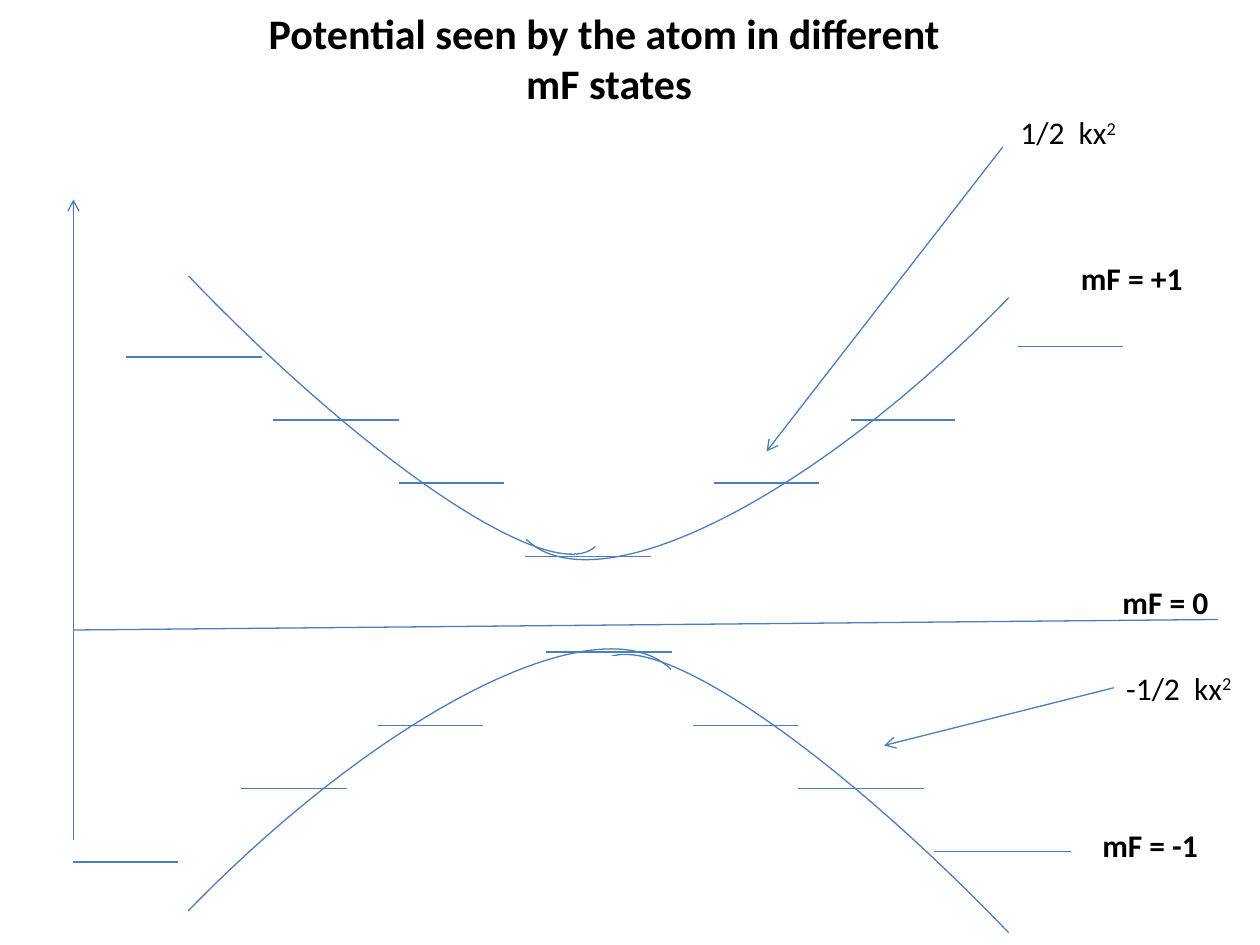
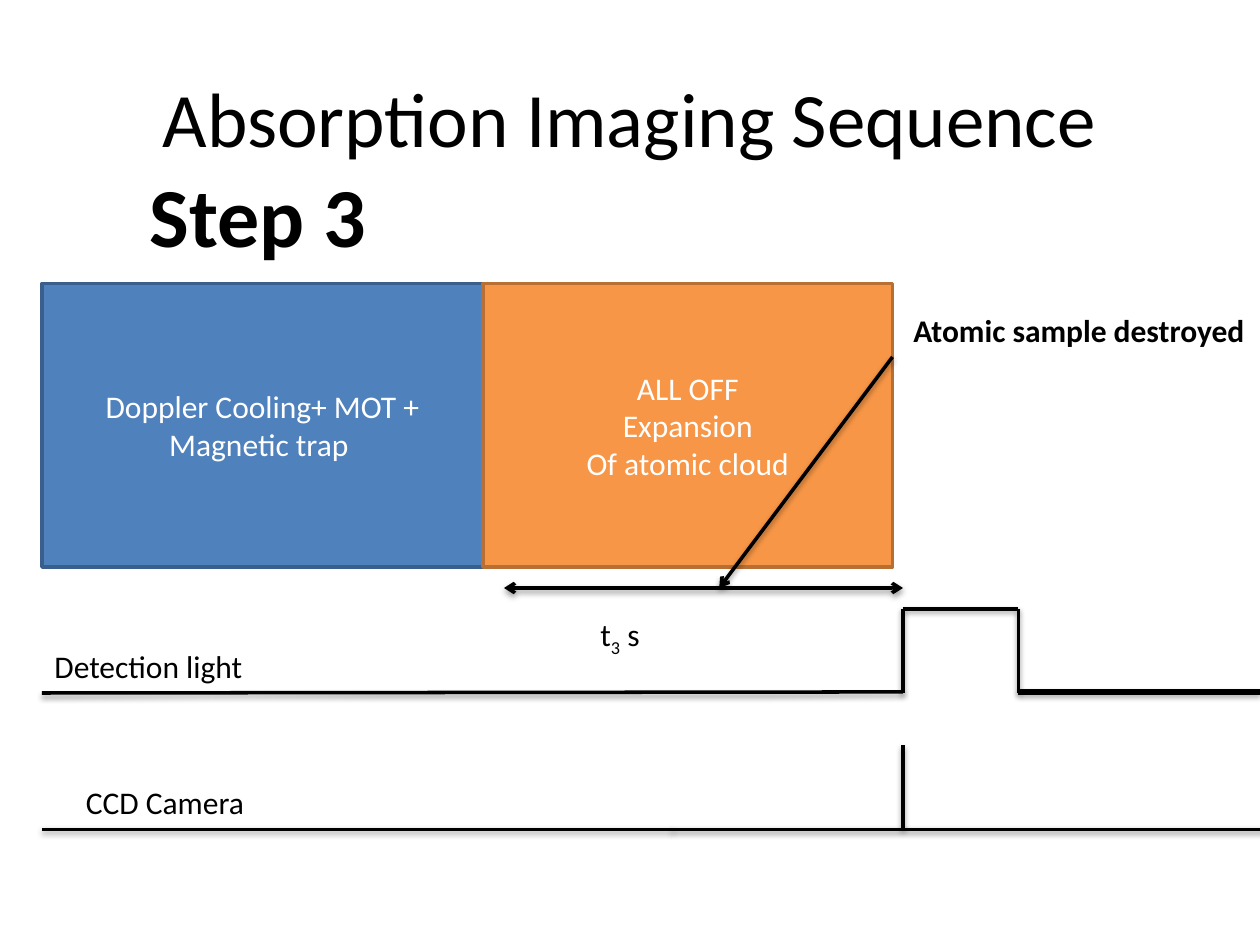
from dataclasses import dataclass
from typing import Optional

import pptx
import pptx.dml.color
import pptx.enum.shapes
import pptx.enum.text
import pptx.oxml
import pptx.oxml.ns
import pptx.util
from lxml import etree

COLS, ROWS = 120, 90  # the grid laid over each slide
WIDE, HIGH = pptx.util.Inches(10), pptx.util.Inches(7.5)
FONT = "Calibri"
HUES = {
    "black": "000000",
    "white": "FFFFFF",
    "curve": "4B7EBC",
    "blue": "4F81BD",
    "navy": "3A5F8C",
    "orange": "F79646",
    "rust": "B76F34",
}
SHAPES = pptx.enum.shapes.MSO_SHAPE
ALIGN = pptx.enum.text.PP_ALIGN


@dataclass(frozen=True)
class Line:
    x1: float
    y1: float
    x2: float
    y2: float
    hue: str = "curve"
    width: float = 0.75
    head: bool = False
    tail: bool = False
    glow: int = 0  # shadow strength in percent


@dataclass(frozen=True)
class Label:
    """Text box; script is a raised or lowered mark, followed by rest."""
    col: float
    row: float
    wide: float
    text: str
    bold: bool = False
    script: str = ""
    shift: int = 0
    rest: str = ""
    size: float = 18
    high: float = 4.8


@dataclass(frozen=True)
class Box:
    col: float
    row: float
    wide: float
    high: float
    fill: str
    edge: Optional[str] = None
    text: str = ""


@dataclass(frozen=True)
class Arc:
    """Quarter ellipse placed by its centre."""
    x: float
    y: float
    wide: float
    high: float
    turn: float
    flip: bool = False


@dataclass(frozen=True)
class Level:
    start: float
    end: float
    row: float


def across(cols: float) -> int:
    return round(WIDE * cols / COLS)


def down(rows: float) -> int:
    return round(HIGH * rows / ROWS)


def place(x: float, y: float, wide: float, high: float) -> tuple[int, int, int, int]:
    return across(x), down(y), across(wide), down(high)


def shade(name: str) -> pptx.dml.color.RGBColor:
    return pptx.dml.color.RGBColor.from_string(HUES[name])


def style(frame, size: float, hue: str, bold: bool = False, align=None) -> None:
    for para in frame.paragraphs:
        para.alignment = align
        for run in para.runs:
            font = run.font
            font.name, font.size, font.bold = FONT, pptx.util.Pt(size), bold
            font.color.rgb = shade(hue)


def draw_line(slide, line: Line) -> None:
    link = slide.shapes.add_connector(
        pptx.enum.shapes.MSO_CONNECTOR.STRAIGHT,
        across(line.x1), down(line.y1), across(line.x2), down(line.y2))
    link.line.color.rgb = shade(line.hue)
    link.line.width = pptx.util.Pt(line.width)
    qn = pptx.oxml.ns.qn
    props = link._element.spPr
    stroke = props.find(qn("a:ln"))
    for tag, shown in (("a:headEnd", line.head), ("a:tailEnd", line.tail)):
        if shown:
            etree.SubElement(stroke, qn(tag), type="arrow")
    effects = etree.SubElement(props, qn("a:effectLst"))
    if line.glow:
        cast = etree.SubElement(
            effects, qn("a:outerShdw"), blurRad="40000", dist="20000",
            dir="5400000", rotWithShape="0")
        tint = etree.SubElement(cast, qn("a:srgbClr"), val=HUES["black"])
        etree.SubElement(tint, qn("a:alpha"), val=str(line.glow * 1000))


def draw_label(slide, label: Label) -> None:
    box = slide.shapes.add_textbox(
        *place(label.col, label.row, label.wide, label.high))
    frame = box.text_frame
    frame.word_wrap = False
    frame.auto_size = pptx.enum.text.MSO_AUTO_SIZE.SHAPE_TO_FIT_TEXT
    frame.text = label.text
    para = frame.paragraphs[0]
    if label.script:
        mark = para.add_run()
        mark.text = label.script
        mark._r.get_or_add_rPr().set("baseline", str(label.shift * 1000))
    if label.rest:
        para.add_run().text = label.rest
    style(frame, label.size, "black", label.bold)


def draw_title(slide, col: float, row: float, text: str, size: float,
               bold: bool = False) -> None:
    frame = slide.shapes.add_textbox(*place(col, row, 108, 15)).text_frame
    frame.word_wrap = True
    frame.vertical_anchor = pptx.enum.text.MSO_ANCHOR.MIDDLE
    frame.text = text
    style(frame, size, "black", bold, ALIGN.CENTER)


def draw_box(slide, box: Box) -> None:
    shape = slide.shapes.add_shape(
        SHAPES.RECTANGLE, *place(box.col, box.row, box.wide, box.high))
    shape.shadow.inherit = False
    shape.fill.solid()
    shape.fill.fore_color.rgb = shade(box.fill)
    if box.edge:
        shape.line.color.rgb = shade(box.edge)
        shape.line.width = pptx.util.Pt(2)
    else:
        shape.line.fill.background()
    if box.text:
        shape.text_frame.text = box.text
        style(shape.text_frame, 18, "white", align=ALIGN.CENTER)


def draw_arc(slide, arc: Arc) -> None:
    shape = slide.shapes.add_shape(SHAPES.ARC, *place(
        arc.x - arc.wide / 2, arc.y - arc.high / 2, arc.wide, arc.high))
    shape.shadow.inherit = False
    shape.fill.background()
    shape.line.color.rgb = shade("curve")
    shape.line.width = pptx.util.Pt(0.75)
    shape.rotation = arc.turn
    if arc.flip:
        shape._element.spPr.xfrm.set("flipH", "1")


# The lower well is the upper one after a half turn about a point.
SPAN, DROP = 114, 115.1
LEVELS = [
    Level(12, 25, 34), Level(26, 38, 40), Level(38, 48, 46),
    Level(50, 62, 53), Level(68, 78, 46), Level(81, 91, 40),
    Level(97, 107, 33),
]
ARCS = [
    Arc(83.94, 16.56, 97.08, 33.84, 134.2),
    Arc(25.26, 19.26, 90.84, 20.28, 226.2, flip=True),
]
STATES = [
    Label(101.76, 24.12, 12.24, "mF = +1", bold=True),
    Label(103.8, 78.12, 11.64, "mF = -1", bold=True),
    Label(105.72, 54.96, 10.68, "mF = 0", bold=True),
    Label(96, 10.2, 11.76, "1/2  kx", script="2", shift=30),
    Label(106.08, 63.12, 12.72, "-1/2  kx", script="2", shift=30),
]
GUIDES = [
    Line(7, 80, 7, 19, tail=True),
    Line(7, 60, 116, 59),
    Line(95.5, 14, 73, 43, tail=True),
    Line(106.08, 65.5, 84.2, 71, tail=True),
]


def draw_wells(slide) -> None:
    draw_title(slide, 4, -2, "Potential seen by the atom in different \vmF states",
               24, bold=True)
    for line in GUIDES:
        draw_line(slide, line)
    for lev in LEVELS:
        draw_line(slide, Line(lev.start, lev.row, lev.end, lev.row))
        draw_line(slide, Line(SPAN - lev.start, DROP - lev.row,
                              SPAN - lev.end, DROP - lev.row))
    for arc in ARCS:
        draw_arc(slide, arc)
        draw_arc(slide, Arc(SPAN - arc.x, DROP - arc.y, arc.wide, arc.high,
                            (arc.turn + 180) % 360, arc.flip))
    for label in STATES:
        draw_label(slide, label)
    draw_box(slide, Box(55, 62.5, 5, 2.5, "white"))


PULSE, STOP = 86, 97  # columns where the light turns on and off
HIGH_ROW, LOW_ROW, BASE = 58, 66, 79
STEPS = [
    Box(4, 27, 42, 27, "blue", "navy", "Doppler Cooling+ MOT + Magnetic trap "),
    Box(46, 27, 39, 27, "orange", "rust", "ALL OFF\nExpansion\nOf atomic cloud"),
]
TRACES = [
    (4, LOW_ROW, PULSE, LOW_ROW - 0.1),
    (PULSE, LOW_ROW, PULSE, HIGH_ROW),
    (PULSE, HIGH_ROW, STOP, HIGH_ROW),
    (STOP, HIGH_ROW, STOP, LOW_ROW),
    (4, BASE, 64, BASE),
    (PULSE, BASE, PULSE, 71),
    (64, BASE, 124, BASE),
]
NOTES = [
    Label(56, 58, 6.36, "t", script="3", shift=-25, rest=" s"),
    Label(4, 61, 20.52, "Detection light"),
    Label(85.8, 29, 34.2, "Atomic sample destroyed", bold=True),
    Label(7, 74, 17.64, "CCD Camera"),
    Label(13.08, 15, 23.28, "Step 3", bold=True, size=48, high=10.92),
]


def draw_steps(slide) -> None:
    draw_title(slide, 6, 3.6, "Absorption Imaging Sequence", 44)
    for box in STEPS:
        draw_box(slide, box)
    for ends in TRACES:
        draw_line(slide, Line(*ends, "black", 2, glow=38))
    draw_line(slide, Line(STOP, 65.9, COLS, 65.9, "black", 3, glow=35))
    draw_line(slide, Line(48, 56, PULSE, 56, "black", 2, True, True, 38))
    draw_line(slide, Line(85, 34, 68.5, 56, "black", 2, tail=True, glow=38))
    for label in NOTES:
        draw_label(slide, label)


def main() -> None:
    deck = pptx.Presentation()
    deck.slide_width, deck.slide_height = WIDE, HIGH
    for draw in (draw_wells, draw_steps):
        draw(deck.slides.add_slide(deck.slide_layouts[6]))
    deck.save("out.pptx")


if __name__ == "__main__":
    main()
